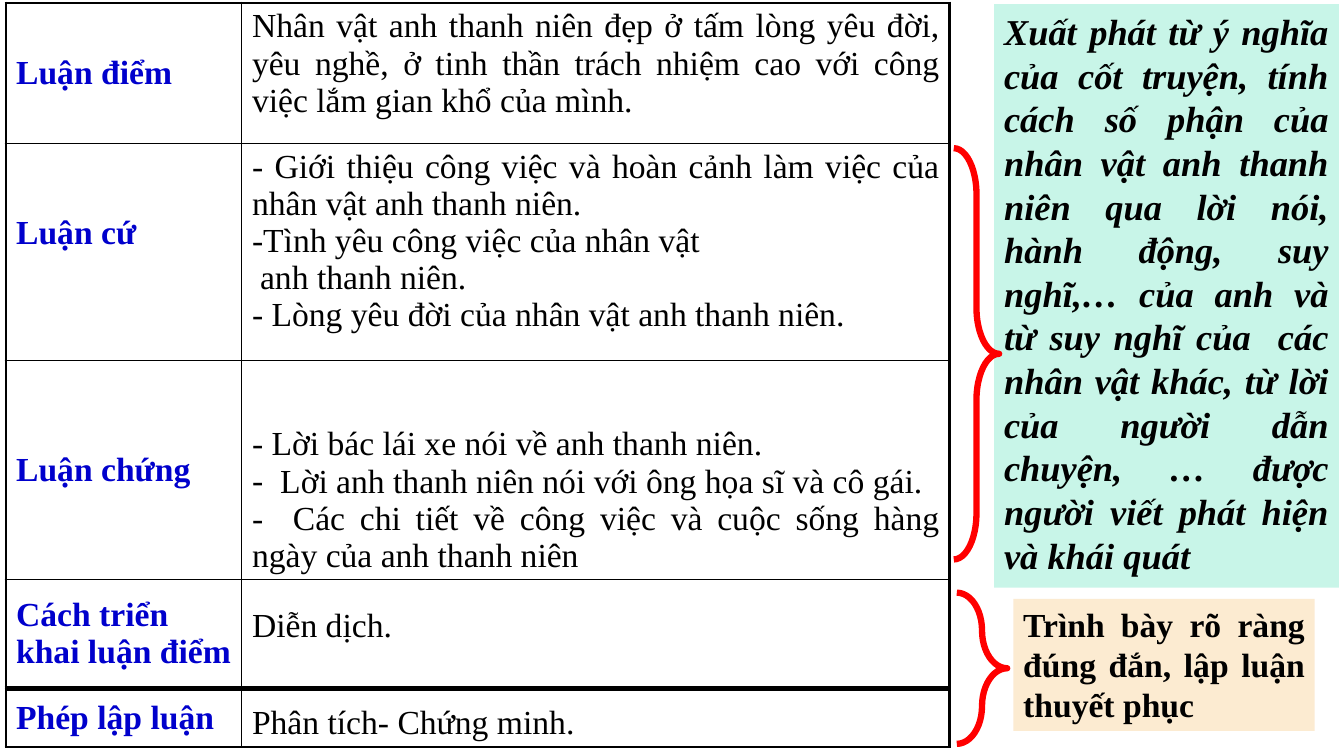
from lxml.etree import SubElement as Sub
from pptx import Presentation
from pptx.dml.color import RGBColor
from pptx.enum.shapes import MSO_SHAPE as Shape
from pptx.enum.text import MSO_ANCHOR as Anchor, PP_ALIGN as Align
from pptx.oxml.ns import qn
from pptx.util import Inches, Pt

FONT = "Times New Roman"
BLACK, BLUE, RED = "000000", "0000CC", "FF0000"
MINT, CREAM = "C8F5E8", "FCEBD1"
LEFT, WIDTH, LABEL = 0.06, 9.36, 2.34
FINE, THIN, THICK = 0.75, 1, 2.25
PAD, RAISED = 0.05, 0.42

# top, height, label, label bottom margin, body anchor, body bottom margin,
# body lines as (text, bullet, indent)
ROWS = [
    (0.03, 1.39, "Luận điểm", PAD, Anchor.TOP, PAD, [
        ("Nhân vật anh thanh niên đẹp ở tấm lòng yêu đời, yêu nghề, "
         "ở tinh thần trách nhiệm cao với công việc lắm gian khổ của mình.",
         "", 0)]),
    (1.42, 2.16, "Luận cứ", RAISED, Anchor.TOP, PAD, [
        ("- Giới thiệu công việc và hoàn cảnh làm việc của "
         "nhân vật anh thanh niên.", "", 0),
        ("Tình yêu công việc của nhân vật", "-", 0),
        ("anh thanh niên.", "", 0.08),
        ("- Lòng yêu đời của nhân vật anh thanh niên.", "", 0)]),
    (3.58, 2.17, "Luận chứng", PAD, Anchor.BOTTOM, PAD, [
        ("- Lời bác lái xe nói về anh thanh niên.", "", 0),
        ("Lời anh thanh niên nói với ông họa sĩ và cô gái.", "-", 0.28),
        ("-  Các chi tiết về công việc và cuộc sống hàng ngày "
         "của anh thanh niên", "", 0)]),
    (5.75, 1.07, "Cách triển khai luận điểm", PAD, Anchor.BOTTOM, RAISED, [
        ("Diễn dịch.", "", 0)]),
    (6.84, 0.57, "Phép lập luận", PAD, Anchor.BOTTOM, PAD, [
        ("Phân tích- Chứng minh.", "", 0)]),
]

SOURCE = ("Xuất phát từ ý nghĩa của cốt truyện, tính cách số phận của nhân vật "
          "anh thanh niên qua lời nói, hành động, suy nghĩ,… của anh và từ suy "
          "nghĩ của  các nhân vật khác, từ lời của người dẫn chuyện, … được "
          "người viết phát hiện và khái quát")
STYLE = "Trình bày rõ ràng đúng đắn, lập luận thuyết phục"


def tint(code):
    return RGBColor.from_string(code)


def write(par, text, color=BLACK, size=24, bold=False, italic=False):
    run = par.add_run()
    run.text = text
    font = run.font
    font.name, font.size = FONT, Pt(size)
    font.bold, font.italic = bold, italic
    font.color.rgb = tint(color)


def indent(par, bullet, depth):
    """Set the left margin, with a hanging bullet if one is given."""
    props = par._p.get_or_add_pPr()
    props.set("marL", str(Inches(depth)))
    props.set("indent", str(-Inches(depth) if bullet else 0))
    if bullet:
        Sub(props, qn("a:buFont"), typeface=FONT)
        Sub(props, qn("a:buChar"), char=bullet)


def border(cell, **widths):
    props = cell._tc.get_or_add_tcPr()
    for side in "LRTB":
        line = Sub(props, qn("a:ln" + side), w=str(Pt(widths.get(side, THIN))))
        fill = Sub(line, qn("a:solidFill"))
        Sub(fill, qn("a:srgbClr"), val=BLACK)


def add_row(slide, top, height, label, lift, anchor, gap, lines):
    """Add one label and its body as a table of a single row."""
    frame = slide.shapes.add_table(1, 2, Inches(LEFT), Inches(top),
                                   Inches(WIDTH), Inches(height))
    table = frame.table
    table.first_row = table.horz_banding = False
    table.columns[0].width = Inches(LABEL)
    table.columns[1].width = Inches(WIDTH - LABEL)
    head, body = table.cell(0, 0), table.cell(0, 1)
    upper = THICK if top in (ROWS[0][0], ROWS[-1][0]) else THIN
    lower = THICK if top == ROWS[-2][0] else THIN
    border(head, L=THICK, R=FINE, T=upper, B=lower)
    border(body, L=FINE, R=THICK, T=upper, B=lower)
    for cell in (head, body):
        cell.fill.background()
    head.vertical_anchor, head.margin_bottom = Anchor.MIDDLE, Inches(lift)
    body.vertical_anchor, body.margin_bottom = anchor, Inches(gap)
    write(head.text_frame.paragraphs[0], label, BLUE, bold=True)
    for num, (text, bullet, depth) in enumerate(lines):
        frame = body.text_frame
        par = frame.add_paragraph() if num else frame.paragraphs[0]
        par.alignment = Align.JUSTIFY
        indent(par, bullet, depth)
        write(par, text)


def add_shape(slide, kind, box):
    shape = slide.shapes.add_shape(kind, *map(Inches, box))
    shape.shadow.inherit = False
    return shape


def add_note(slide, box, fill, text, size, italic=False):
    note = add_shape(slide, Shape.RECTANGLE, box)
    note.fill.solid()
    note.fill.fore_color.rgb = tint(fill)
    note.line.fill.background()
    frame = note.text_frame
    frame.word_wrap = True
    frame.vertical_anchor = Anchor.TOP
    par = frame.paragraphs[0]
    par.alignment = Align.JUSTIFY
    write(par, text, size=size, bold=True, italic=italic)


def add_brace(slide, box, curve):
    brace = add_shape(slide, Shape.RIGHT_BRACE, box)
    brace.adjustments[0], brace.adjustments[1] = curve, 0.5
    brace.fill.background()
    brace.line.color.rgb = tint(RED)
    brace.line.width = Pt(4.5)


def main():
    deck = Presentation()
    deck.slide_width, deck.slide_height = Inches(13.33), Inches(7.5)
    slide = deck.slides.add_slide(deck.slide_layouts[6])
    for row in ROWS:
        add_row(slide, *row)
    add_note(slide, (9.86, 0.04, 3.42, 5.79), MINT, SOURCE, 26, italic=True)
    add_brace(slide, (9.46, 1.47, 0.45, 4.08), 1.02)
    add_note(slide, (10.05, 5.94, 2.99, 1.31), CREAM, STYLE, 24)
    add_brace(slide, (9.49, 5.88, 0.5, 1.5), 0.75)
    deck.save("out.pptx")


if __name__ == "__main__":
    main()
